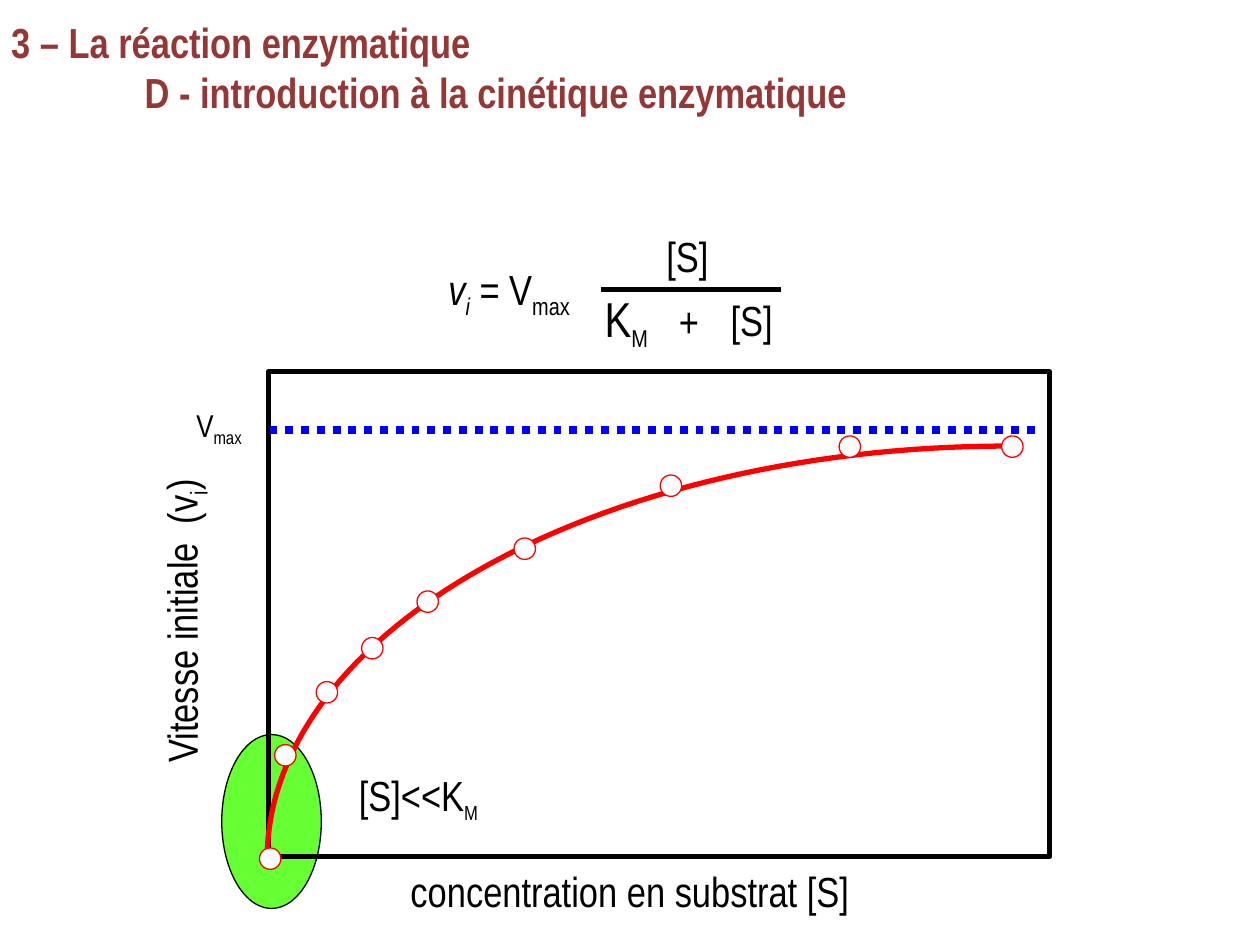
import math

import pptx
import pptx.dml.color
import pptx.enum.dml
import pptx.enum.shapes
import pptx.enum.text
import pptx.oxml.ns
import pptx.util
from lxml import etree
from pptx.dml.color import RGBColor
from pptx.util import Inches

BLACK = RGBColor(0x00, 0x00, 0x00)
WHITE = RGBColor(0xFF, 0xFF, 0xFF)
RED = RGBColor(0xFF, 0x00, 0x00)
BLUE = RGBColor(0x00, 0x00, 0xFF)
GREEN = RGBColor(0x66, 0xFF, 0x33)
BROWN = RGBColor(0x95, 0x37, 0x35)

SHAPES = pptx.enum.shapes.MSO_SHAPE
ALIGN = pptx.enum.text.PP_ALIGN


class KineticsSlide:
    """Draws the elements of an enzyme kinetics slide in one style."""

    font = "Arial Narrow"
    size = 24

    def __init__(self, slide):
        self.shapes = slide.shapes

    def style(self, shape, fill, line, weight):
        shape.shadow.inherit = False
        if fill is None:
            shape.fill.background()
        else:
            shape.fill.solid()
            shape.fill.fore_color.rgb = fill
        shape.line.color.rgb = line
        shape.line.width = pptx.util.Pt(weight)

    def shape(self, kind, box, fill, line, weight=0.75):
        preset = self.shapes.add_shape(kind, *map(Inches, box))
        self.style(preset, fill, line, weight)

    def curve(self, points, color, weight):
        start, *rest = [(Inches(x), Inches(y)) for x, y in points]
        builder = self.shapes.build_freeform(*start)
        builder.add_line_segments(rest, close=False)
        self.style(builder.convert_to_shape(), None, color, weight)

    def rule(self, left, right, y, color, weight, dash=None):
        rule = self.shapes.add_connector(
            pptx.enum.shapes.MSO_CONNECTOR.STRAIGHT,
            Inches(left), Inches(y), Inches(right), Inches(y))
        rule.line.color.rgb = color
        rule.line.width = pptx.util.Pt(weight)
        rule.line.dash_style = dash
        etree.SubElement(rule._element.spPr, pptx.oxml.ns.qn("a:effectLst"))

    def box(self, box, wrap=False):
        frame_shape = self.shapes.add_textbox(*map(Inches, box))
        frame = frame_shape.text_frame
        frame.word_wrap = wrap
        frame.auto_size = pptx.enum.text.MSO_AUTO_SIZE.SHAPE_TO_FIT_TEXT
        return frame_shape

    def format(self, run, size, color=BLACK):
        run.font.name = self.font
        run.font.size = pptx.util.Pt(size)
        run.font.color.rgb = color

    def label(self, box, *pieces, size=size, sub_size=None, italic=0, rotation=0):
        """Writes pieces that alternate between baseline and subscript."""
        label = self.box(box, wrap=bool(rotation))
        label.rotation = rotation
        paragraph = label.text_frame.paragraphs[0]
        if rotation:
            paragraph.alignment = ALIGN.CENTER
        for index, piece in enumerate(pieces):
            run = paragraph.add_run()
            run.text = piece
            subscript = index % 2 == 1
            self.format(run, sub_size if subscript and sub_size else size)
            run.font.italic = index < italic
            if subscript:
                run.font._element.set("baseline", "-25000")

    def heading(self, box, text):
        frame = self.box(box, wrap=True).text_frame
        frame.text = text
        for paragraph in frame.paragraphs:
            paragraph.alignment = ALIGN.JUSTIFY
            properties = paragraph._p.get_or_add_pPr()
            properties.set("marL", str(Inches(0.56)))
            properties.set("indent", str(-Inches(0.56)))
            for run in paragraph.runs:
                self.format(run, self.size, BROWN)
                run.font.bold = True


def saturation_curve(steps=60):
    """Returns points on a quarter ellipse from the origin to the plateau."""
    angles = [math.pi / 2 * step / steps for step in range(steps + 1)]
    return [(8 - 5.88 * math.cos(a), 6.82 - 3.28 * math.sin(a)) for a in angles]


def main():
    presentation = pptx.Presentation()
    presentation.slide_width = Inches(10)
    presentation.slide_height = Inches(7.5)
    kinetics = KineticsSlide(
        presentation.slides.add_slide(presentation.slide_layouts[6]))

    kinetics.shape(SHAPES.OVAL, (1.76, 5.83, 0.79, 1.38), GREEN, BLACK)
    kinetics.label((2.75, 6.06, 1.17, 0.5), "[S]<<K", "M", sub_size=20)
    kinetics.label((3.16, 6.82, 3.73, 0.5), "concentration en substrat [S]")
    kinetics.label((-0.4, 4.68, 3.67, 0.5),
                   "Vitesse initiale  (v", "i", ")", rotation=269.8)

    kinetics.shape(SHAPES.RECTANGLE, (2.13, 2.95, 6.2, 3.85), None, BLACK, 3)
    kinetics.curve(saturation_curve(), RED, 3)
    kinetics.rule(2.14, 8.22, 3.41, BLUE, 4.5,
                  pptx.enum.dml.MSO_LINE.ROUND_DOT)
    kinetics.label((1.46, 3.17, 0.6, 0.4), "V", "max", size=18)

    measurements = [(2.06, 6.73), (2.18, 5.91), (2.51, 5.41), (2.87, 5.06),
                    (3.31, 4.69), (4.08, 4.27), (5.24, 3.77), (6.66, 3.46),
                    (7.95, 3.46)]
    for left, top in measurements:
        kinetics.shape(SHAPES.OVAL, (left, top, 0.17, 0.17), WHITE, RED)

    kinetics.label((3.46, 2.04, 1.3, 0.5), "v", "i", " = V", "max", italic=2)
    kinetics.rule(4.77, 6.2, 2.3, BLACK, 3)
    kinetics.label((5.19, 1.78, 0.54, 0.5), "[S]")
    kinetics.label((5.7, 2.29, 0.54, 0.5), "[S]")
    kinetics.label((4.7, 2.24, 0.57, 0.57), "K", "M", size=28, sub_size=24)
    kinetics.label((5.29, 2.3, 0.36, 0.5), "+")

    kinetics.heading((-0.01, 0.08, 10, 0.91),
                     "3 – La réaction enzymatique\n"
                     "\t\tD - introduction à la cinétique enzymatique")

    presentation.save("out.pptx")


if __name__ == "__main__":
    main()
